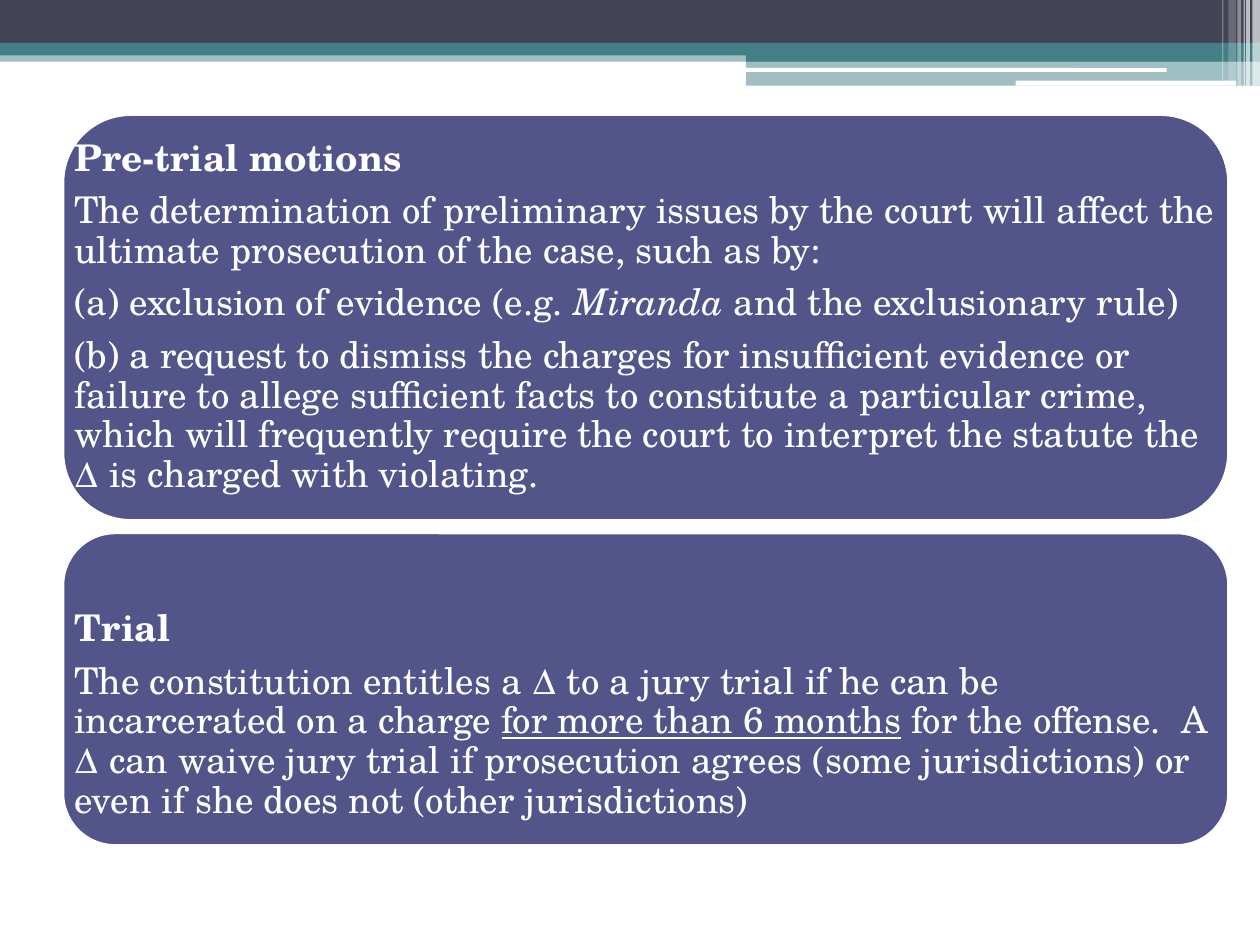
from pptx import Presentation
from pptx.dml.color import RGBColor
from pptx.enum.shapes import MSO_SHAPE as Kind
from pptx.enum.text import MSO_ANCHOR as Anchor
from pptx.oxml.ns import qn
from pptx.util import Inches, Pt
from lxml import etree

FONT = "TeX Gyre Schola"
WHITE, DARK, TEAL, PLUM = "FFFFFF", "424456", "438086", "53548A"


def rgb(code):
    return RGBColor.from_string(code)


def block(slide, box, fill, kind=Kind.RECTANGLE, alpha=100):
    """Add a filled shape without line or shadow; alpha is in percent."""
    shape = slide.shapes.add_shape(kind, *map(Inches, box))
    shape.shadow.inherit = False
    shape.fill.solid()
    shape.fill.fore_color.rgb = rgb(fill)
    shape.line.fill.background()
    if alpha < 100:
        color = shape.fill._xPr.find(qn("a:solidFill"))[0]
        etree.SubElement(color, qn("a:alpha")).set("val", str(alpha * 1000))
    return shape


def banner(slide, left, top, width):
    """Draw the header bands, the white strips and the stripes at the right."""
    # Bands: x, y, width, height, colour, alpha
    tab = 5.92
    for x, y, w, h, fill, alpha in (
        (0, 0.4, width, 0.09, TEAL, 50),
        (0, 0, width, 0.34, DARK, 100),
        (0, 0.34, width, 0.1, TEAL, 100),
        (tab, 0.39, width - tab, 0.1, TEAL, 100),
        (tab, 0.48, width - tab, 0.2, TEAL, 50),
    ):
        block(slide, (left + x, top + y, w, h), fill, alpha=alpha)

    # White strips
    for x, y, w, h in ((5.91, 0.54, 3.35, 0.03), (8.06, 0.64, 1.75, 0.04)):
        block(slide, (left + x, top + y, w, h), WHITE, Kind.ROUNDED_RECTANGLE)

    # Stripes: distance from the right edge, width, height, alpha
    for gap, w, h, alpha in (
        (0.06, 0.06, 0.68, 65),
        (0.11, 0.03, 0.68, 65),
        (0.13, 0.01, 0.68, 60),
        (0.18, 0.03, 0.68, 40),
        (0.25, 0.06, 0.64, 20),
        (0.3, 0.01, 0.64, 30),
    ):
        block(slide, (left + width - gap, top, w, h), WHITE, alpha=alpha)


def card(slide, box, title, body, drop=0):
    """Draw a rounded card; drop moves its text down from the top inset."""
    panel = block(slide, box, PLUM, Kind.ROUNDED_RECTANGLE)
    panel.line.color.rgb = rgb(WHITE)
    panel.line.width = Pt(1.5)

    frame = slide.shapes.add_textbox(*map(Inches, box)).text_frame
    frame.word_wrap = True
    frame.vertical_anchor = Anchor.MIDDLE
    pad = 0.09
    frame.margin_left = frame.margin_right = frame.margin_bottom = Inches(pad)
    frame.margin_top = Inches(pad + drop)

    for i, parts in enumerate([[(title, "")]] + body):
        para = frame.add_paragraph() if i else frame.paragraphs[0]
        para.line_spacing = 0.9
        para.space_after = Pt(7.35)
        font = para.font
        font.name, font.size, font.bold = FONT, Pt(21), i == 0
        font.color.rgb = rgb(WHITE)
        for text, style in parts:
            run = para.add_run()
            run.text = text
            if style == "italic":
                run.font.italic = True
            elif style == "under":
                run.font.underline = True


MOTIONS = [
    [("The determination of preliminary issues by the court will affect the "
      "ultimate prosecution of the case, such as by:", "")],
    [("(a) exclusion of evidence (e.g.", ""), (" Miranda ", "italic"),
     ("and the exclusionary rule)", "")],
    [("(b) a request to dismiss the charges for insufficient evidence or "
      "failure to allege sufficient facts to constitute a particular crime, "
      "which will frequently require the court to interpret the statute the "
      "∆ is charged with violating.", "")],
]
TRIAL = [
    [("The constitution entitles a ∆ to a jury trial if he can be "
      "incarcerated on a charge ", ""),
     ("for more than 6 months", "under"),
     (" for the offense.  A ∆ can waive jury trial if prosecution agrees "
      "(some jurisdictions) or even if she does not (other jurisdictions)",
      "")],
]


def main():
    deck = Presentation()
    deck.slide_width, deck.slide_height = Inches(10), Inches(7.5)
    slide = deck.slides.add_slide(deck.slide_layouts[6])
    banner(slide, 0, 0, 10)
    card(slide, (0.5, 0.91, 9.25, 3.22), "Pre-trial motions", MOTIONS)
    card(slide, (0.5, 4.23, 9.25, 2.48), "Trial", TRIAL, drop=0.42)
    deck.save("out.pptx")


if __name__ == "__main__":
    main()
